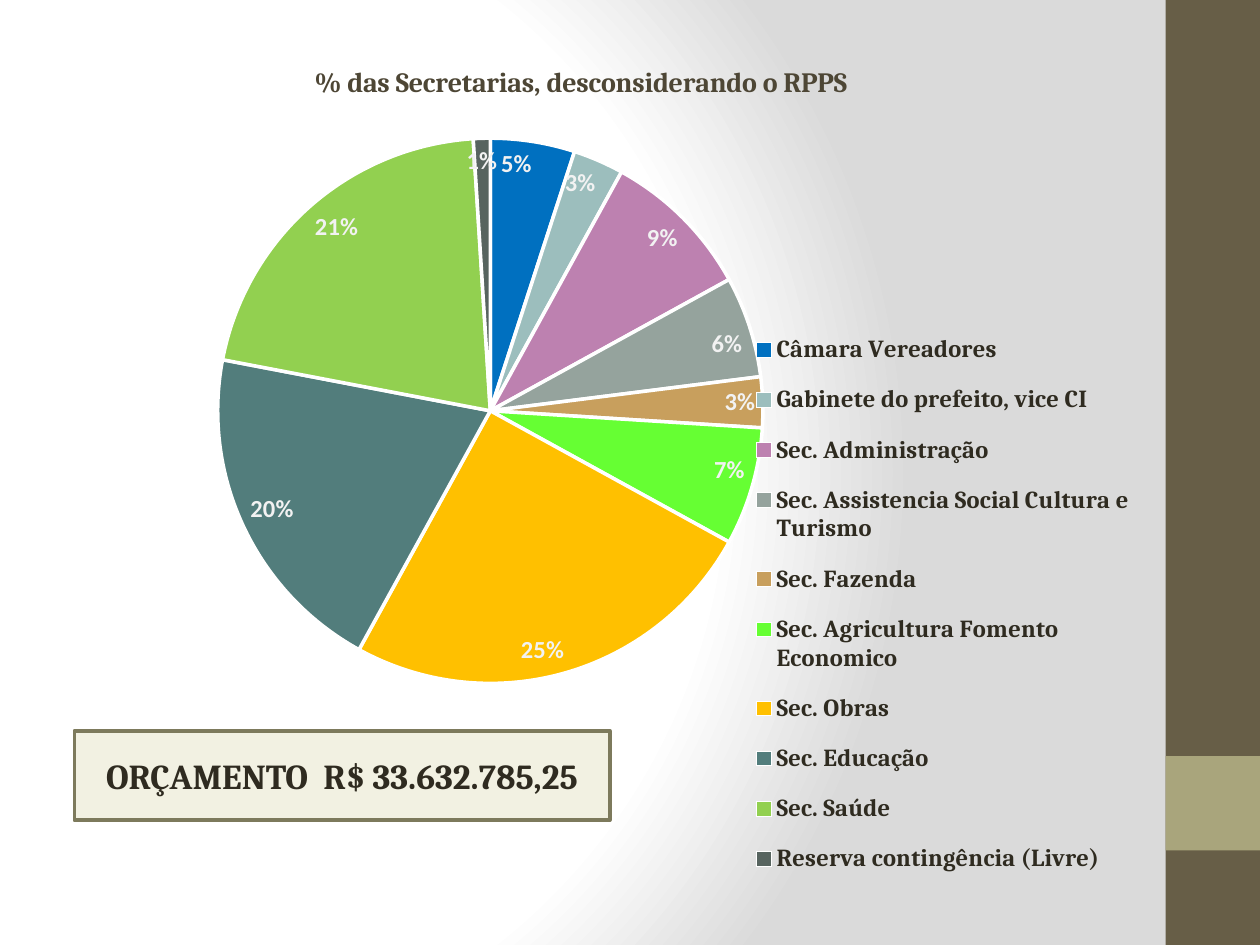
from typing import NamedTuple

from lxml.etree import SubElement
from pptx import Presentation
from pptx.chart.data import CategoryChartData
from pptx.dml.color import RGBColor
from pptx.enum.chart import XL_CHART_TYPE, XL_LABEL_POSITION, XL_LEGEND_POSITION
from pptx.enum.shapes import MSO_SHAPE
from pptx.enum.text import MSO_ANCHOR, PP_ALIGN
from pptx.oxml import parse_xml
from pptx.oxml.ns import nsdecls, qn
from pptx.util import Inches, Pt

INK = "2F2B20"


class Box(NamedTuple):
    left: float
    top: float
    width: float
    height: float


class Share(NamedTuple):
    department: str
    percent: int
    color: str


SHARES = [
    Share("Câmara Vereadores", 5, "0070C0"),
    Share("Gabinete do prefeito, vice CI", 3, "9CBEBD"),
    Share("Sec. Administração", 9, "BD81B0"),
    Share("Sec. Assistencia Social Cultura e Turismo", 6, "95A39D"),
    Share("Sec. Fazenda", 3, "C89F5D"),
    Share("Sec. Agricultura Fomento Economico", 7, "66FF33"),
    Share("Sec. Obras", 25, "FFC000"),
    Share("Sec. Educação", 20, "527D7C"),
    Share("Sec. Saúde", 21, "92D050"),
    Share("Reserva contingência (Livre)", 1, "57645F"),
]


def rgb(color: str) -> RGBColor:
    return RGBColor.from_string(color)


def style_font(font, name: str, size: float, color: str, bold: bool = True) -> None:
    font.name = name
    font.size = Pt(size)
    font.bold = bold
    font.color.rgb = rgb(color)


def paint_background(slide) -> None:
    slide.background.fill.solid()
    properties = slide.background._cSld.bg.bgPr
    stops = "".join(
        f'<a:gs pos="{position * 1000}"><a:srgbClr val="{color}"/></a:gs>'
        for position, color in [(0, "FFFFFF"), (75, "FFFFFF"), (100, "DADADA")]
    )
    gradient = parse_xml(
        f'<a:gradFill {nsdecls("a")} rotWithShape="1"><a:gsLst>{stops}</a:gsLst>'
        '<a:path path="circle">'
        '<a:fillToRect l="20000" t="50000" r="100000" b="50000"/>'
        "</a:path></a:gradFill>"
    )
    properties.replace(properties.find(qn("a:solidFill")), gradient)


def add_block(slide, box: Box, fill: str):
    block = slide.shapes.add_shape(MSO_SHAPE.RECTANGLE, *map(Inches, box))
    block.shadow.inherit = False
    block.fill.solid()
    block.fill.fore_color.rgb = rgb(fill)
    block.line.fill.background()
    return block


def place(element, inner: bool = False, **fractions: float) -> None:
    for old_layout in element.findall(qn("c:layout")):
        element.remove(old_layout)
    layout = parse_xml(f'<c:layout {nsdecls("c")}/>')
    manual = SubElement(layout, qn("c:manualLayout"))
    settings = {"layoutTarget": "inner"} if inner else {}
    settings |= {"xMode": "edge", "yMode": "edge"} | fractions
    for tag, value in settings.items():
        SubElement(manual, qn(f"c:{tag}")).set("val", str(value))
    anchors = [element.find(qn(f"c:{tag}")) for tag in ("legendPos", "tx")]
    anchor = next((found for found in anchors if found is not None), None)
    if anchor is None:
        element.insert(0, layout)
    else:
        anchor.addnext(layout)


def add_budget_pie(slide, box: Box) -> None:
    budget = CategoryChartData()
    budget.categories = [share.department for share in SHARES]
    budget.add_series("Series 1", [share.percent for share in SHARES])
    chart = slide.shapes.add_chart(
        XL_CHART_TYPE.PIE, *map(Inches, box), budget
    ).chart
    style_font(chart.font, "Calibri", 10, INK, bold=False)

    chart.has_title = True
    heading = chart.chart_title.text_frame.paragraphs[0]
    heading.text = "% das Secretarias, desconsiderando o RPPS"
    style_font(heading.runs[0].font, "Cambria", 16, "4D4635")
    place(chart.chart_title._element, x=0.26, y=0.03)

    chart.has_legend = True
    chart.legend.position = XL_LEGEND_POSITION.BOTTOM
    chart.legend.include_in_layout = False
    style_font(chart.legend.font, "Cambria", 14, INK)
    place(chart.legend._element, x=0.65, y=0.32, w=0.34, h=0.66)

    pie = chart.plots[0]
    pie.vary_by_categories = True
    place(chart._chartSpace.chart.plotArea, inner=True, x=0, y=0.12, w=0.84, h=0.62)
    pie.has_data_labels = True
    labels = pie.data_labels
    labels.show_percentage = True
    labels.show_value = False
    labels.number_format = "0%"
    labels.number_format_is_linked = False
    labels.position = XL_LABEL_POSITION.INSIDE_END
    style_font(labels.font, "Calibri", 14, "F2F2F2")

    for index, share in enumerate(SHARES):
        wedge = pie.series[0].points[index].format
        wedge.fill.solid()
        wedge.fill.fore_color.rgb = rgb(share.color)
        wedge.line.color.rgb = rgb("FFFFFF")
        wedge.line.width = Pt(2)


def add_total(slide, box: Box) -> None:
    total = add_block(slide, box, "F2F1E2")
    total.line.color.rgb = rgb("7D7A5C")
    total.line.width = Pt(2)
    total.text_frame.text = "ORÇAMENTO  R$ 33.632.785,25"
    total.text_frame.word_wrap = True
    total.text_frame.vertical_anchor = MSO_ANCHOR.MIDDLE
    amount = total.text_frame.paragraphs[0]
    amount.alignment = PP_ALIGN.CENTER
    style_font(amount.runs[0].font, "Cambria", 20, INK)


def main() -> None:
    presentation = Presentation()
    presentation.slide_width = Inches(10)
    presentation.slide_height = Inches(7.5)
    slide = presentation.slides.add_slide(presentation.slide_layouts[6])
    paint_background(slide)
    add_block(slide, Box(9.25, 0, 0.75, 7.5), "675E47")
    add_block(slide, Box(9.25, 6, 0.75, 0.75), "A9A57C")
    add_budget_pie(slide, Box(0.12, 0.26, 8.98, 6.98))
    add_total(slide, Box(0.59, 5.8, 4.25, 0.71))
    presentation.save("out.pptx")


if __name__ == "__main__":
    main()
